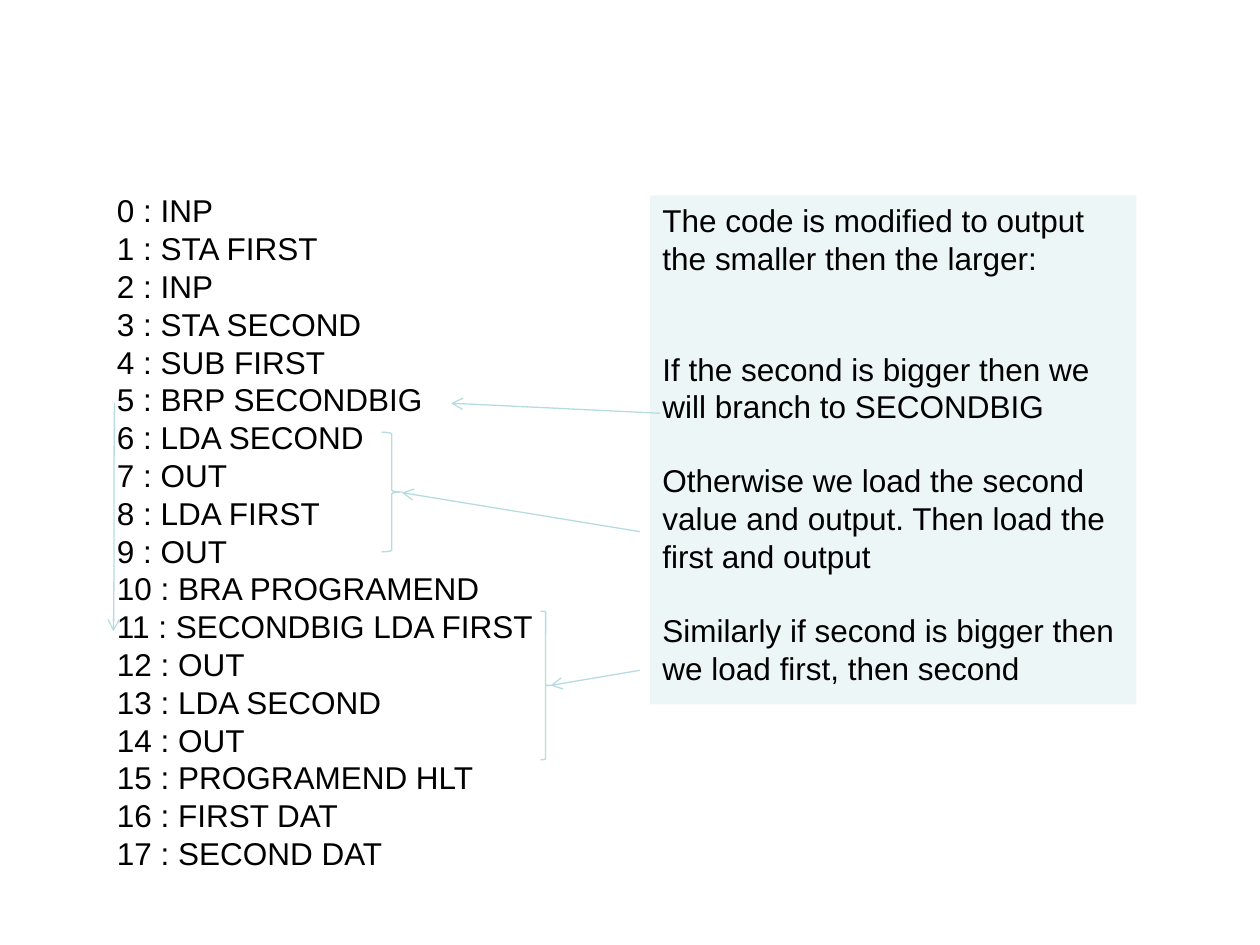
from pptx import Presentation
from pptx.dml.color import RGBColor
from pptx.enum.shapes import MSO_CONNECTOR, MSO_SHAPE
from pptx.enum.text import MSO_ANCHOR, MSO_AUTO_SIZE, PP_ALIGN
from pptx.oxml.ns import qn
from pptx.util import Inches, Pt
from lxml import etree

STRAIGHT, CURVE = MSO_CONNECTOR.STRAIGHT, MSO_CONNECTOR.CURVE
RECT, BRACE = MSO_SHAPE.RECTANGLE, MSO_SHAPE.RIGHT_BRACE
TOP, LEFT, GROW = MSO_ANCHOR.TOP, PP_ALIGN.LEFT, MSO_AUTO_SIZE.SHAPE_TO_FIT_TEXT
INK = RGBColor(0x00, 0x00, 0x00)
PALE = RGBColor(0xBB, 0xE0, 0xE3)
EDGE = RGBColor(0xB6, 0xDC, 0xDF)
COLS, ROWS = 100, 75
FONT, SIZE, THIN = "Arial", Pt(18), Pt(0.75)
GAP = 20.7

CODE = [
    "INP", "STA FIRST", "INP", "STA SECOND", "SUB FIRST", "BRP SECONDBIG",
    "LDA SECOND", "OUT", "LDA FIRST", "OUT", "BRA PROGRAMEND",
    "SECONDBIG LDA FIRST", "OUT", "LDA SECOND", "OUT", "PROGRAMEND HLT",
    "FIRST DAT", "SECOND DAT",
]
NOTES = [
    ("The code is modified to output the smaller then the larger:", 0),
    ("If the second is bigger then we will branch to SECONDBIG", 2),
    ("Otherwise we load the second value and output. Then load the first and output", 1),
    ("Similarly if second is bigger then we load first, then second", 1),
]


class Deck:
    """Draws styled elements on a slide, placed by grid columns and rows."""

    def __init__(self):
        self.show = Presentation()
        self.show.slide_width, self.show.slide_height = Inches(10), Inches(7.5)
        self.slide = self.show.slides.add_slide(self.show.slide_layouts[6])
        self.shapes = self.slide.shapes

    def place(self, *spots):
        wide, high = self.show.slide_width, self.show.slide_height
        return [round(wide * spot / COLS) if i % 2 == 0 else round(high * spot / ROWS)
                for i, spot in enumerate(spots)]

    def letter(self, shape, lines):
        frame = shape.text_frame
        frame.word_wrap = True
        frame.auto_size = GROW
        frame.vertical_anchor = TOP
        for i, (text, skip) in enumerate(lines):
            para = frame.add_paragraph() if i else frame.paragraphs[0]
            para.text = text
            para.alignment = LEFT
            para.space_before = Pt(skip * GAP)
            para.font.name, para.font.size = FONT, SIZE
            para.font.color.rgb = INK

    def text(self, spot, lines):
        self.letter(self.shapes.add_textbox(*self.place(*spot)), lines)

    def panel(self, spot, lines, share):
        shape = self.shapes.add_shape(RECT, *self.place(*spot))
        shape.shadow.inherit = False
        shape.fill.solid()
        shape.fill.fore_color.rgb = PALE
        tint = shape._element.spPr.find(qn("a:solidFill"))[0]
        etree.SubElement(tint, qn("a:alpha")).set("val", str(share * 1000))
        shape.line.fill.background()
        self.letter(shape, lines)

    def brace(self, *spot):
        shape = self.shapes.add_shape(BRACE, *self.place(*spot))
        shape.shadow.inherit = False
        shape.fill.background()
        shape.line.color.rgb, shape.line.width = EDGE, THIN

    def arrow(self, *ends, kind=STRAIGHT):
        link = self.shapes.add_connector(kind, *self.place(*ends))
        link.line.color.rgb, link.line.width = EDGE, THIN
        props = link._element.spPr
        etree.SubElement(props.find(qn("a:ln")), qn("a:tailEnd")).set("type", "arrow")
        etree.SubElement(props, qn("a:effectLst"))


def main():
    deck = Deck()
    deck.text((8.3, 14.7, 80.3, 55.5), [(f"{i} : {step}", 0) for i, step in enumerate(CODE)])
    deck.panel((51.6, 15.5, 38.6, 40.4), NOTES, 26)
    deck.arrow(52.4, 32.8, 35.8, 32)
    deck.arrow(50.8, 42.2, 31.9, 39.1)
    deck.arrow(9.1, 32, 9, 50.1, kind=CURVE)
    deck.brace(30.3, 34.3, 1.6, 9.5)
    deck.arrow(50.8, 53.2, 43.7, 54.4)
    deck.brace(42.9, 48.5, 0.8, 11.8)
    deck.show.save("out.pptx")


if __name__ == "__main__":
    main()
